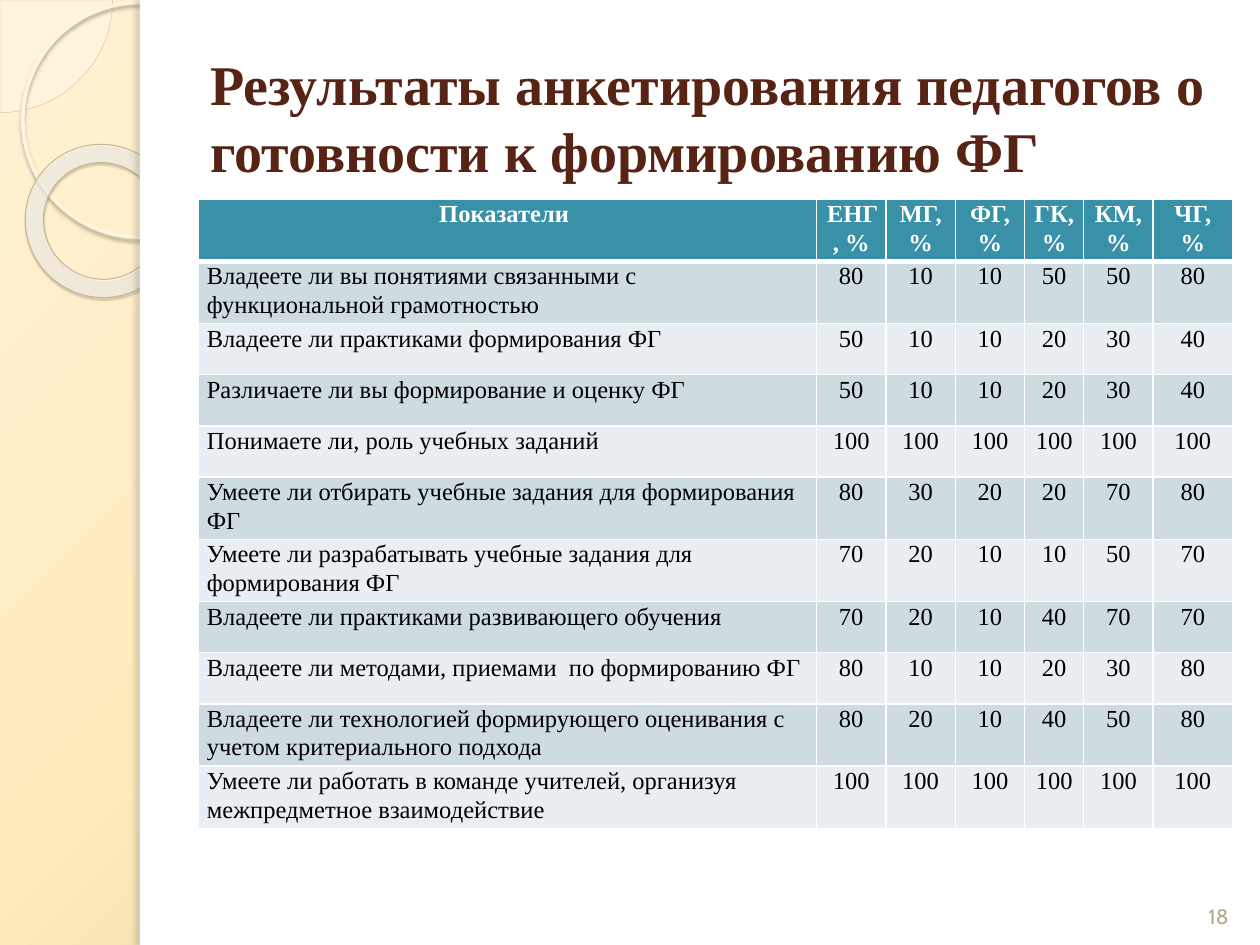
from lxml import etree
from pptx import Presentation
from pptx import util as u
from pptx.dml.color import RGBColor
from pptx.enum import shapes, text
from pptx.oxml import ns

COLORS = {
    "white": "FFFFFF", "black": "000000", "title": "572314", "number": "B6A98A",
    "header": "3891A7", "odd": "CEDCE1", "even": "E8EEF1",
    "pie": "FEFAF4", "pie_line": "D3C39F", "ring": "FFF5DE", "ring_shadow": "B0A68F",
    "donut_line": "C7B893", "donut_shadow": "5A5444", "panel_shadow": "736F63",
}
BACKGROUND = [(0, "FFF1D3", 100), (40, "FFEBBE", 100), (100, "C9B484", 100)]
DONUT = [(0, "FFFCF6", 70), (70, "FFFEFB", 55), (100, "F0D28E", 60)]
SERIF = "Times New Roman"
COLUMNS = [12.47, 1.4, 1.4, 1.4, 1.19, 1.4, 1.6]
ROW_HEIGHT = 1.03
HEADER = ["Показатели ", "ЕНГ, %", "МГ, %", "ФГ, %", "ГК, %", "КМ, %", "ЧГ, %"]
ANSWERS = [
    ("Владеете ли вы понятиями связанными с функциональной грамотностью", 80, 10, 10, 50, 50, 80),
    ("Владеете ли практиками формирования ФГ", 50, 10, 10, 20, 30, 40),
    ("Различаете ли вы формирование и оценку ФГ", 50, 10, 10, 20, 30, 40),
    ("Понимаете ли, роль учебных заданий", 100, 100, 100, 100, 100, 100),
    ("Умеете ли отбирать учебные задания для формирования ФГ", 80, 30, 20, 20, 70, 80),
    ("Умеете ли разрабатывать учебные задания для формирования ФГ", 70, 20, 10, 10, 50, 70),
    ("Владеете ли практиками развивающего обучения", 70, 20, 10, 40, 70, 70),
    ("Владеете ли методами, приемами  по формированию ФГ", 80, 10, 10, 20, 30, 80),
    ("Владеете ли технологией формирующего оценивания с учетом критериального подхода",
     80, 20, 10, 40, 50, 80),
    ("Умеете ли работать в команде учителей, организуя межпредметное взаимодействие",
     100, 100, 100, 100, 100, 100),
]


def rgb(name):
    """Return the named colour."""
    return RGBColor.from_string(COLORS[name])


def add_sub(parent, tag, **attrs):
    """Append a DrawingML child with the given attributes."""
    return etree.SubElement(parent, ns.qn(tag), {k: str(v) for k, v in attrs.items()})


def add_color(parent, value, alpha=100):
    """Append a hex colour with an opacity in percent."""
    color = add_sub(parent, "a:srgbClr", val=value)
    if alpha < 100:
        add_sub(color, "a:alpha", val=alpha * 1000)


def set_gradient(element, stops, focus):
    """Replace the first solid fill with a circular gradient."""
    solid = next(element.iter(ns.qn("a:solidFill")))
    grad = etree.Element(ns.qn("a:gradFill"), rotWithShape="1")
    stop_list = add_sub(grad, "a:gsLst")
    for position, value, alpha in stops:
        add_color(add_sub(stop_list, "a:gs", pos=position * 1000), value, alpha)
    circle = add_sub(grad, "a:path", path="circle")
    add_sub(circle, "a:fillToRect", **{k: v * 1000 for k, v in zip("ltrb", focus)})
    solid.getparent().replace(solid, grad)


def add_shadow(sp, name, alpha, blur, distance, angle):
    """Give a shape an outer shadow."""
    effects = sp._element.spPr.find(ns.qn("a:effectLst"))
    shadow = add_sub(effects, "a:outerShdw", blurRad=u.Pt(blur), dist=u.Pt(distance),
                     dir=angle * 60000, algn="ctr", rotWithShape=0)
    add_color(shadow, COLORS[name], alpha)


def add_shape(s, kind, box, fill=None, line=None, width=0):
    """Add a preset shape with optional fill and line."""
    sp = s.shapes.add_shape(kind, *map(u.Cm, box))
    sp.shadow.inherit = False
    if fill:
        sp.fill.solid()
        sp.fill.fore_color.rgb = rgb(fill)
    else:
        sp.fill.background()
    if line:
        sp.line.color.rgb = rgb(line)
        sp.line.width = u.Pt(width)
    else:
        sp.line.fill.background()
    return sp


def style_paragraph(p, font, size, color, bold=False, align=None):
    """Set the font and alignment of a paragraph."""
    p.font.name = font
    p.font.size = u.Pt(size)
    p.font.color.rgb = rgb(color)
    p.font.bold = bold
    p.alignment = align


def add_text(s, box, content, anchor, **style):
    """Add a wrapped text box with one paragraph."""
    tf = s.shapes.add_textbox(*map(u.Cm, box)).text_frame
    tf.word_wrap = True
    tf.vertical_anchor = anchor
    tf.text = content
    style_paragraph(tf.paragraphs[0], **style)


def add_decoration(s):
    """Draw the gradient strip with its circles and the white panel."""
    s.background.fill.solid()
    s.background.fill.fore_color.rgb = rgb("white")
    set_gradient(s.element, BACKGROUND, (-24, -20, 124, 120))
    kinds = shapes.MSO_SHAPE
    pie = add_shape(s, kinds.PIE, (-2.27, -2.27, 4.54, 4.54), "pie", "pie_line", 0.25)
    pie.adjustments[0] = 0
    pie.adjustments[1] = 54.02
    color = next(pie._element.spPr.iter(ns.qn("a:srgbClr")))
    add_sub(color, "a:alpha", val=33000)
    ring = add_shape(s, kinds.OVAL, (0.46, 0.05, 4.73, 4.73), None, "ring", 2.15)
    add_shadow(ring, "ring_shadow", 85, 2, 2, 90)
    donut = add_shape(s, kinds.DONUT, (0.5, 2.92, 3.12, 3.07), "white", "donut_line", 0.58)
    donut.adjustments[0] = 0.12
    donut.rotation = 38.6
    set_gradient(donut._element.spPr, DONUT, (-408, -50, 508, 150))
    add_shadow(donut, "donut_shadow", 35, 1, 1.2, 75)
    add_shape(s, kinds.RECTANGLE, (2.82, 0, 22.58, 19.05), "white")
    edge = add_shape(s, kinds.RECTANGLE, (2.82, 0, 0.2, 19.05), "white")
    add_shadow(edge, "panel_shadow", 25, 3, 3, 180)


def fill_cell(cell, content, fill, color, bold, align, bottom):
    """Write one table cell with its fill and white borders."""
    cell.margin_left = cell.margin_right = u.Cm(0.18)
    cell.margin_top = cell.margin_bottom = 0
    for side, width in (("L", 1), ("R", 1), ("T", 1), ("B", bottom)):
        line = add_sub(cell._tc.get_or_add_tcPr(), f"a:ln{side}", w=u.Pt(width))
        add_color(add_sub(line, "a:solidFill"), COLORS["white"])
    cell.fill.solid()
    cell.fill.fore_color.rgb = rgb(fill)
    cell.text = str(content)
    p = cell.text_frame.paragraphs[0]
    p.line_spacing = 1.06
    style_paragraph(p, SERIF, 14, color, bold, align)


def add_results(s):
    """Add the survey table."""
    rows = [HEADER, *ANSWERS]
    box = (3.99, 4.01, sum(COLUMNS), ROW_HEIGHT * len(rows))
    table = s.shapes.add_table(len(rows), len(COLUMNS), *map(u.Cm, box)).table
    for column, width in zip(table.columns, COLUMNS):
        column.width = u.Cm(width)
    for i, row in enumerate(rows):
        head = i == 0
        fill = "header" if head else "odd" if i % 2 else "even"
        for j, content in enumerate(row):
            align = text.PP_ALIGN.CENTER if head or j else text.PP_ALIGN.LEFT
            fill_cell(table.cell(i, j), content, fill, "white" if head else "black",
                      head, align, 3 if head else 1)


def main():
    """Build and save the slide."""
    prs = Presentation()
    prs.slide_width, prs.slide_height = u.Cm(25.4), u.Cm(19.05)
    s = prs.slides.add_slide(prs.slide_layouts[6])
    add_decoration(s)
    add_text(s, (3.99, 0.76, 20.83, 3.18),
             "Результаты анкетирования педагогов о готовности к формированию ФГ",
             text.MSO_ANCHOR.MIDDLE, font=SERIF, size=32, color="title", bold=True)
    add_results(s)
    add_text(s, (23.93, 17.53, 1.27, 1.32), "18", text.MSO_ANCHOR.BOTTOM,
             font="Cabin", size=12, color="number", align=text.PP_ALIGN.CENTER)
    prs.save("out.pptx")


if __name__ == "__main__":
    main()
